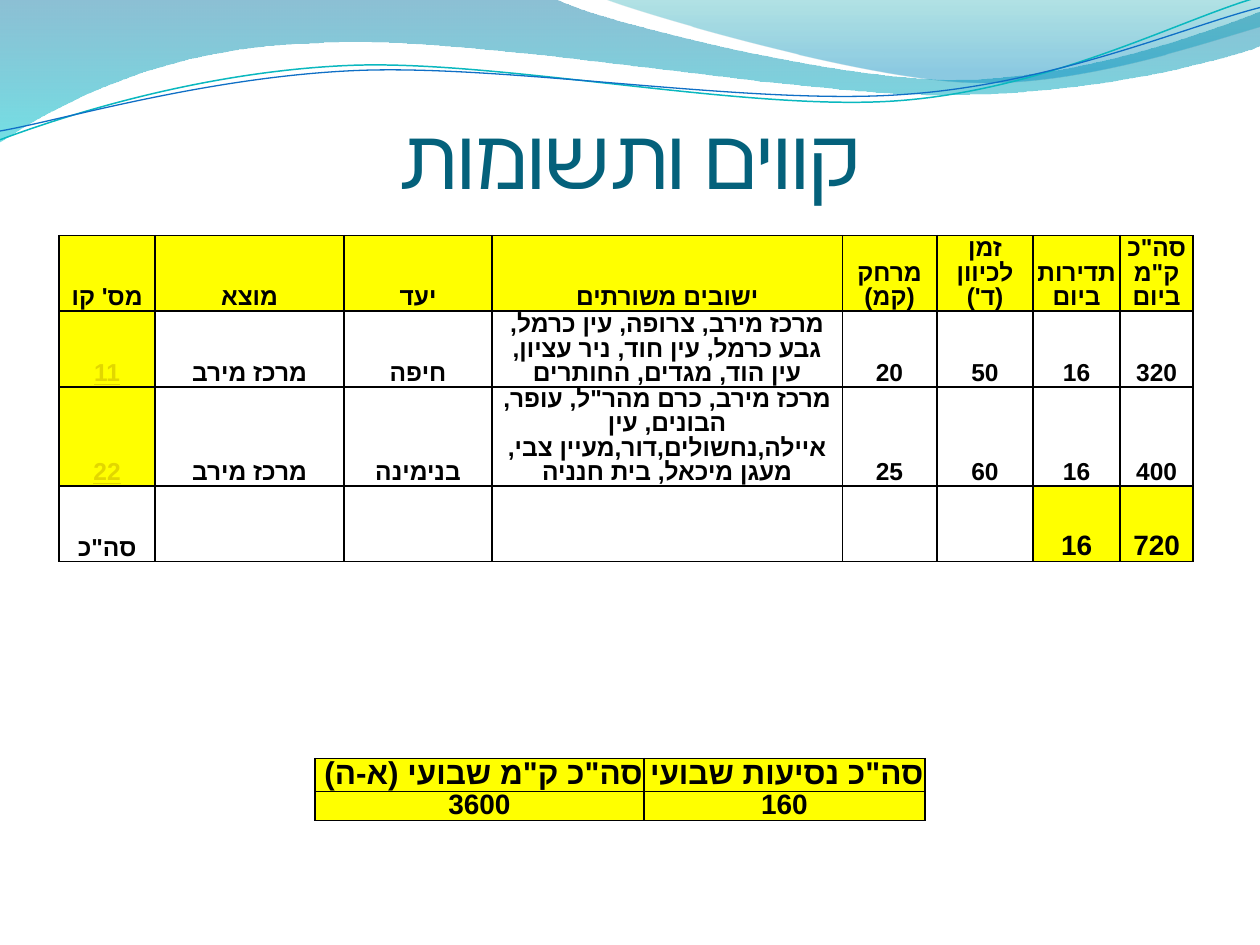
from lxml import etree
from pptx import Presentation
from pptx.dml.color import RGBColor
from pptx.enum.text import MSO_ANCHOR, PP_ALIGN
from pptx.oxml.ns import qn
from pptx.util import Inches, Pt

BOTTOM = MSO_ANCHOR.BOTTOM
CENTER, RIGHT = PP_ALIGN.CENTER, PP_ALIGN.RIGHT
BLACK, YELLOW, GOLD = "000000", "FFFF00", "E2D700"


def color(hex_code):
    return RGBColor.from_string(hex_code)


def write(frame, text, size=14, font="Arial", ink=BLACK, bold=True,
          underline=None, align=CENTER, spacing=None):
    paragraph = frame.paragraphs[0]
    paragraph.alignment = align
    paragraph.line_spacing = spacing
    if any("א" <= letter <= "ת" for letter in text):
        paragraph._p.get_or_add_pPr().set("rtl", "1")
    run = paragraph.add_run()
    run.text = text
    run.font.size = Pt(size)
    run.font.name = font
    run.font.bold = bold
    run.font.underline = underline
    run.font.color.rgb = color(ink)
    etree.SubElement(run._r.get_or_add_rPr(), qn("a:cs"), typeface=font)


class SlideGrid:
    COLUMNS, ROWS = 100, 75

    def __init__(self, deck):
        self.slide = deck.slides.add_slide(deck.slide_layouts[6])
        self.column = deck.slide_width / self.COLUMNS
        self.row = deck.slide_height / self.ROWS

    def box(self, left, top, width, height):
        return (round(left * self.column), round(top * self.row),
                round(width * self.column), round(height * self.row))

    def outline(self, start, segments, close):
        points = [(x * self.column, y * self.row) for segment in segments
                  for x, y in zip(segment[::2], segment[1::2])]
        builder = self.slide.shapes.build_freeform(
            start[0] * self.column, start[1] * self.row)
        builder.add_line_segments(points, close=close)
        shape = builder.convert_to_shape()
        shape.shadow.inherit = False
        steps = iter(list(shape._element.iter(qn("a:lnTo"))))
        for segment in segments:
            first = next(steps)
            if len(segment) == 6:
                first.tag = qn("a:cubicBezTo")
                for _ in range(2):
                    follower = next(steps)
                    first.append(follower[0])
                    follower.getparent().remove(follower)
        return shape

    def wave(self, start, segments, stops):
        shape = self.outline(start, segments, True)
        shape.line.fill.background()
        shape.fill.gradient()
        shape.fill.gradient_angle = 270
        for stop, (position, tint, opacity) in zip(shape.fill.gradient_stops, stops):
            stop.position = position
            stop.color.rgb = color(tint)
            tint_node = stop._gs.find(qn("a:srgbClr"))
            etree.SubElement(tint_node, qn("a:alpha"), val=str(opacity * 1000))

    def strand(self, start, segments, ink, width):
        shape = self.outline(start, segments, False)
        shape.fill.background()
        shape.line.color.rgb = color(ink)
        shape.line.width = Pt(width)

    def title(self, text, area):
        frame = self.slide.shapes.add_textbox(*self.box(*area)).text_frame
        frame.word_wrap = True
        frame.vertical_anchor = BOTTOM
        frame.margin_left = frame.margin_right = frame.margin_bottom = 0
        write(frame, text, size=48, font="Calibri", ink="04617B", bold=False)

    def border(self, cell):
        for side in "LRTB":
            line = etree.SubElement(cell._tc.get_or_add_tcPr(), qn(f"a:ln{side}"),
                                    w=str(Pt(1)))
            fill = etree.SubElement(line, qn("a:solidFill"))
            etree.SubElement(fill, qn("a:srgbClr"), val=BLACK)

    def table(self, left, top, widths, heights, texts, style):
        table = self.slide.shapes.add_table(
            len(heights), len(widths),
            *self.box(left, top, sum(widths), sum(heights))).table
        table.first_row = table.horz_banding = False
        for column, width in zip(table.columns, widths):
            column.width = round(width * self.column)
        for row, height in zip(table.rows, heights):
            row.height = round(height * self.row)
        for r, line in enumerate(texts):
            for c, text in enumerate(line):
                cell = table.cell(r, c)
                self.border(cell)
                filled, size, text_format = style(r, c)
                if filled:
                    cell.fill.solid()
                    cell.fill.fore_color.rgb = color(YELLOW)
                else:
                    cell.fill.background()
                if text:
                    cell.vertical_anchor = BOTTOM
                    side_margin = Inches(0.04 if len(text) > 40 else 0.01)
                    cell.margin_left = cell.margin_right = side_margin
                    cell.margin_top = Inches(0.01)
                    cell.margin_bottom = 0
                    write(cell.text_frame, text, size=size, spacing=Pt(size),
                          **text_format)


def line_style(r, c):
    if r == 3:
        return c >= 6, 16 if c >= 6 else 14, {}
    if r and c == 0:
        return True, 14, {"ink": GOLD, "underline": True}
    return r == 0, 14, {}


def weekly_style(r, c):
    return (True, 16, {}) if r else (True, 18, {"align": RIGHT})


LINES = [
    ["מס' קו", "מוצא", "יעד", "ישובים משורתים", "מרחק (קמ)", "זמן לכיוון (ד')",
     "תדירות ביום", "סה\"כ ק\"מ ביום"],
    ["11", "מרכז מירב", "חיפה",
     "מרכז מירב, צרופה, עין כרמל, גבע כרמל, עין חוד, ניר עציון, עין הוד, מגדים, החותרים",
     "20", "50", "16", "320"],
    ["22", "מרכז מירב", "בנימינה",
     "מרכז מירב, כרם מהר\"ל, עופר, הבונים, עין איילה,נחשולים,דור,מעיין צבי, מעגן מיכאל, בית חנניה",
     "25", "60", "16", "400"],
    ["סה\"כ", "", "", "", "", "", "16", "720"],
]
WEEKLY = [["סה\"כ ק\"מ שבועי (א-ה)", "סה\"כ נסיעות שבועי"], ["3600", "160"]]


def main():
    deck = Presentation()
    deck.slide_width, deck.slide_height = Inches(10), Inches(7.5)
    grid = SlideGrid(deck)
    grid.wave((0, 0), [(44, -0.1), (47.6, 1.7, 66.4, 6.3, 75.8, 6.3),
                       (85.3, 6.3, 95.8, 2.6, 100, 0.9), (100.1, 3.6),
                       (98.3, 4.4, 87, 7.6, 74.6, 7.5),
                       (62.2, 7.5, 38.2, 2.8, 25.7, 3.4),
                       (12.9, 3.6, 4.6, 8.3, -0.1, 11.3)],
              [(0, "0074A1", 45), (1, "00C6CF", 55)])
    grid.wave((47.9, -0.1), [(50.9, 1.1, 68.2, 6.2, 76.9, 6.5),
                             (85.6, 6.9, 96.1, 3.2, 100, 2.1), (100, 0)],
              [(0, "00A1A9", 30), (0.8, "008BBF", 45)])
    grid.strand((0, 11.1), [(4.8, 9.3, 15.8, 5.7, 27.7, 5.2),
                            (39.5, 4.7, 59.3, 8.9, 71.3, 8),
                            (83.3, 7.1, 93.8, 1.5, 99.8, -0.2)], "0AB8BF", 0.85)
    grid.strand((0, 10.4), [(4.7, 9.6, 16.4, 6.1, 28.3, 5.6),
                            (40.3, 5.1, 59.7, 8.4, 71.7, 7.5),
                            (83.6, 6.7, 94.1, 2.1, 100, 0.6)], "0F6FC6", 0.75)
    grid.title("קווים ותשומות", (5, 7.7, 90, 8.7))
    grid.table(4.7, 18.7, [7.6, 15, 11.75, 27.8, 7.5, 7.65, 6.9, 5.8],
               [6, 6, 5.8, 6], LINES, line_style)
    grid.table(25, 60.2, [26.1, 22.3], [2.2, 2.2], WEEKLY, weekly_style)
    deck.save("out.pptx")


if __name__ == "__main__":
    main()
